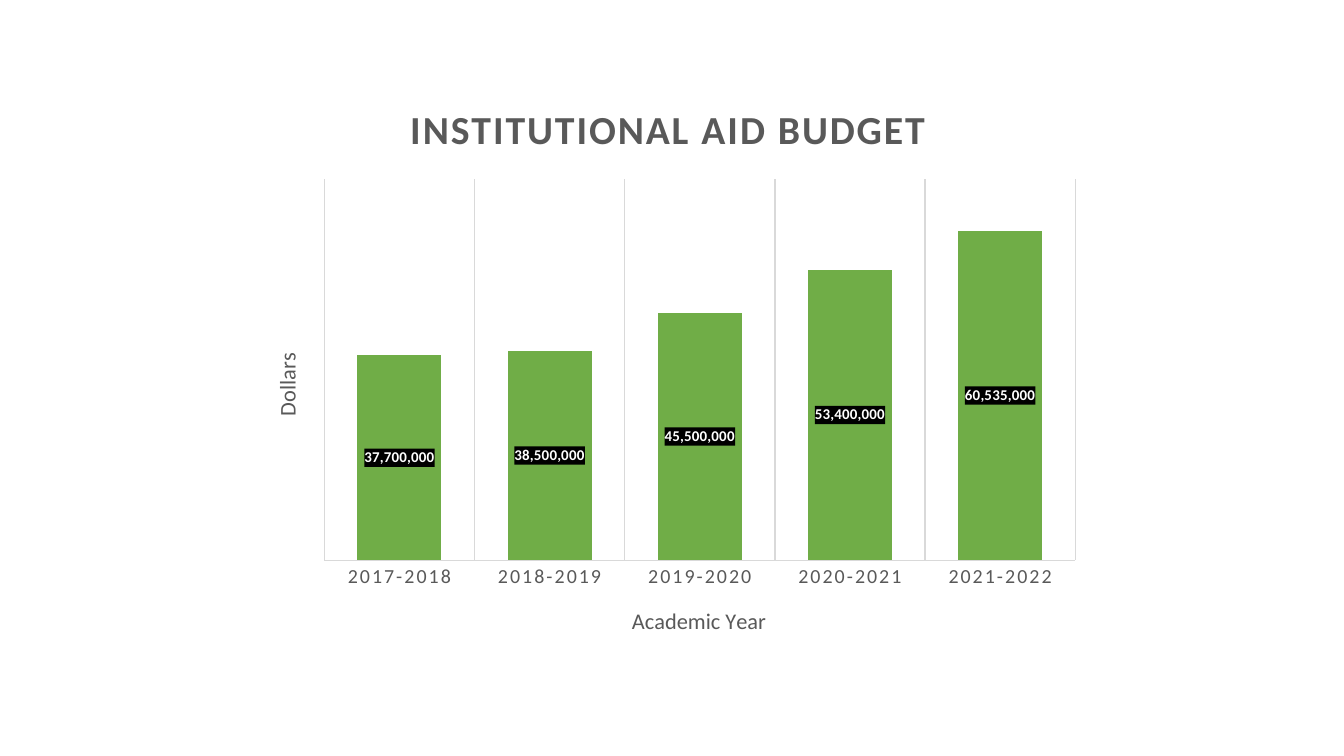
from lxml import etree
from pptx import Presentation
from pptx.chart.data import CategoryChartData
from pptx.dml.color import RGBColor
from pptx.enum.chart import XL_CHART_TYPE, XL_LABEL_POSITION, XL_TICK_MARK
from pptx.oxml import parse_xml
from pptx.oxml.ns import nsdecls, qn
from pptx.util import Pt

STACKED = XL_CHART_TYPE.COLUMN_STACKED
CENTER = XL_LABEL_POSITION.CENTER
NO_TICK = XL_TICK_MARK.NONE
PX = 914400 / 134.4
FONT = "Calibri"
COLORS = {"text": "595959", "grid": "D9D9D9", "bar": "70AD47", "label": "FFFFFF", "label_fill": "000000"}
LEFT, TOP, WIDTH, HEIGHT = 243, 75, 848, 589


def style(font, size, color, bold=False):
    font.name = FONT
    font.size = Pt(size)
    font.bold = bold
    font.color.rgb = RGBColor.from_string(COLORS[color])


def place(parent, index, x, y, w=None, h=None):
    for old in parent.findall(qn("c:layout")):
        parent.remove(old)
    layout = etree.Element(qn("c:layout"))
    manual = etree.SubElement(layout, qn("c:manualLayout"))
    values = {"xMode": "edge", "yMode": "edge", "x": (x - LEFT) / WIDTH, "y": (y - TOP) / HEIGHT}
    if w:
        etree.SubElement(manual, qn("c:layoutTarget")).set("val", "inner")
        values.update(w=w / WIDTH, h=h / HEIGHT)
    for tag, value in values.items():
        etree.SubElement(manual, qn(f"c:{tag}")).set("val", str(value))
    parent.insert(index, layout)


prs = Presentation()
prs.slide_width = round(1344 * PX)
prs.slide_height = round(756 * PX)
s = prs.slides.add_slide(prs.slide_layouts[6])

data = CategoryChartData(number_format="#,##0")
data.categories = [f"{year}-{year + 1}" for year in range(2017, 2022)]
data.add_series("Series 1", [37700000, 38500000, 45500000, 53400000, 60535000])
frame = s.shapes.add_chart(STACKED, *[round(n * PX) for n in (LEFT, TOP, WIDTH, HEIGHT)], data)
chart = frame.chart
chart.has_legend = False
chart.font.name = FONT
chart.font.size = Pt(10)
place(chart._chartSpace.chart.plotArea, 0, 324.4, 179.4, 751, 381)

plot = chart.plots[0]
plot.gap_width = 79
plot.overlap = 100
plot.vary_by_categories = False
series = plot.series[0]
series.format.fill.solid()
series.format.fill.fore_color.rgb = RGBColor.from_string(COLORS["bar"])

labels = series.data_labels
labels.show_value = True
labels.number_format = "#,##0"
labels.number_format_is_linked = False
labels.position = CENTER
style(labels.font, 8, "label", True)
label_fill = parse_xml(
    f'<c:spPr {nsdecls("c", "a")}><a:solidFill>'
    f'<a:srgbClr val="{COLORS["label_fill"]}"/></a:solidFill></c:spPr>'
)
labels._element.find(qn("c:txPr")).addprevious(label_fill)

years = chart.category_axis
years.major_tick_mark = NO_TICK
years.minor_tick_mark = NO_TICK
years.has_major_gridlines = True
for line in (years.format.line, years.major_gridlines.format.line):
    line.width = Pt(0.75)
    line.color.rgb = RGBColor.from_string(COLORS["grid"])
style(years.tick_labels.font, 10.64, "text")
years._element.find(qn("c:txPr")).find(".//" + qn("a:defRPr")).set("spc", "120")

dollars = chart.value_axis
dollars.visible = False
dollars.has_major_gridlines = False
dollars.minimum_scale = 0
dollars.maximum_scale = 70000000

for title, text, size, bold, spacing, x, y in (
    (chart.chart_title, "INSTITUTIONAL AID BUDGET", 21.28, True, 120, 403, 95),
    (years.axis_title, "Academic Year", 11.97, False, 0, 628, 602),
    (dollars.axis_title, "Dollars", 11.97, False, 0, 268, 349),
):
    tf = title.text_frame
    tf.text = text
    r = tf.paragraphs[0].runs[0]
    style(r.font, size, "text", bold)
    r._r.get_or_add_rPr().set("spc", str(spacing))
    place(title._element, 1, x, y)

body = dollars.axis_title.text_frame._txBody.find(qn("a:bodyPr"))
body.set("rot", "-5400000")
body.set("vert", "horz")

prs.save("out.pptx")
